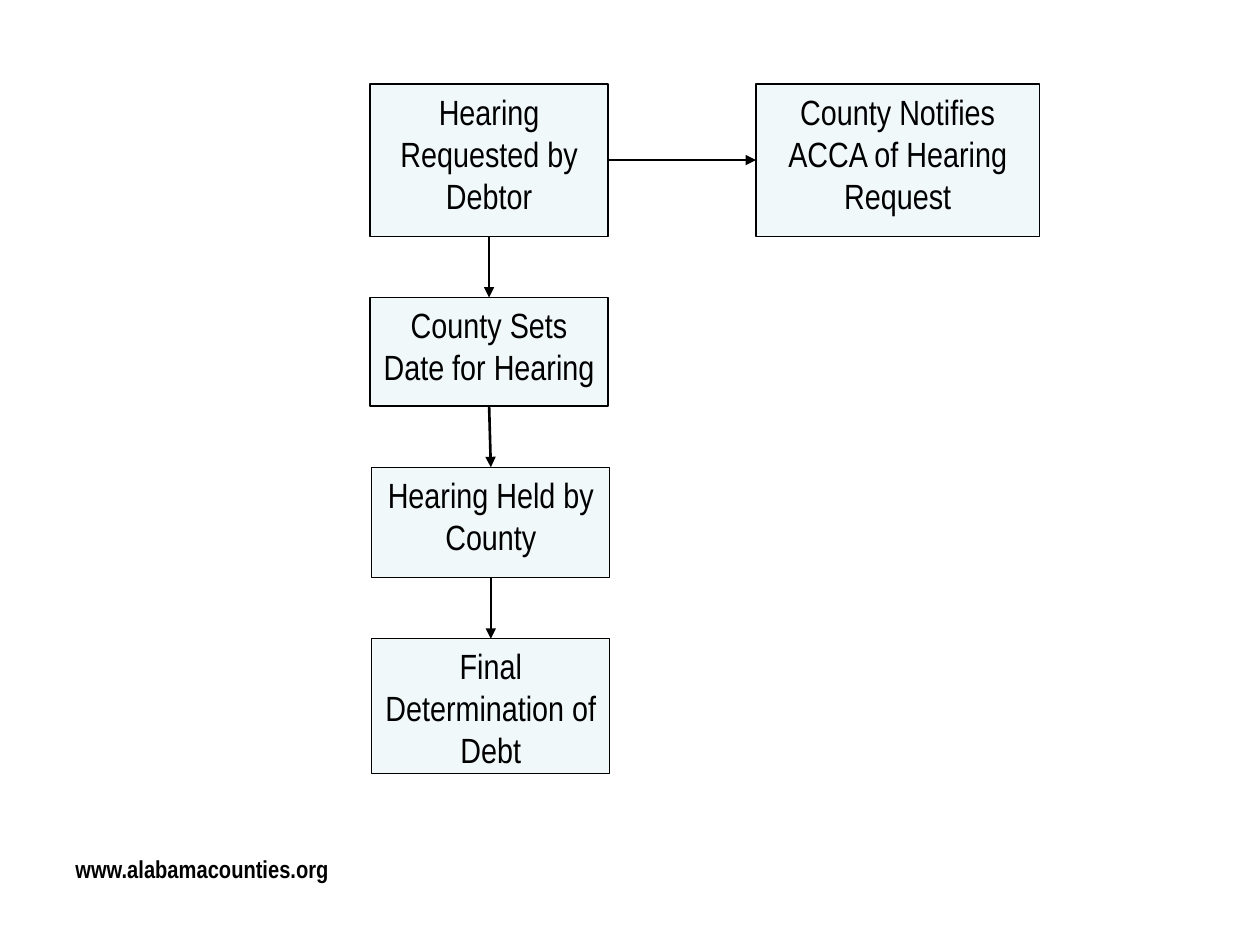
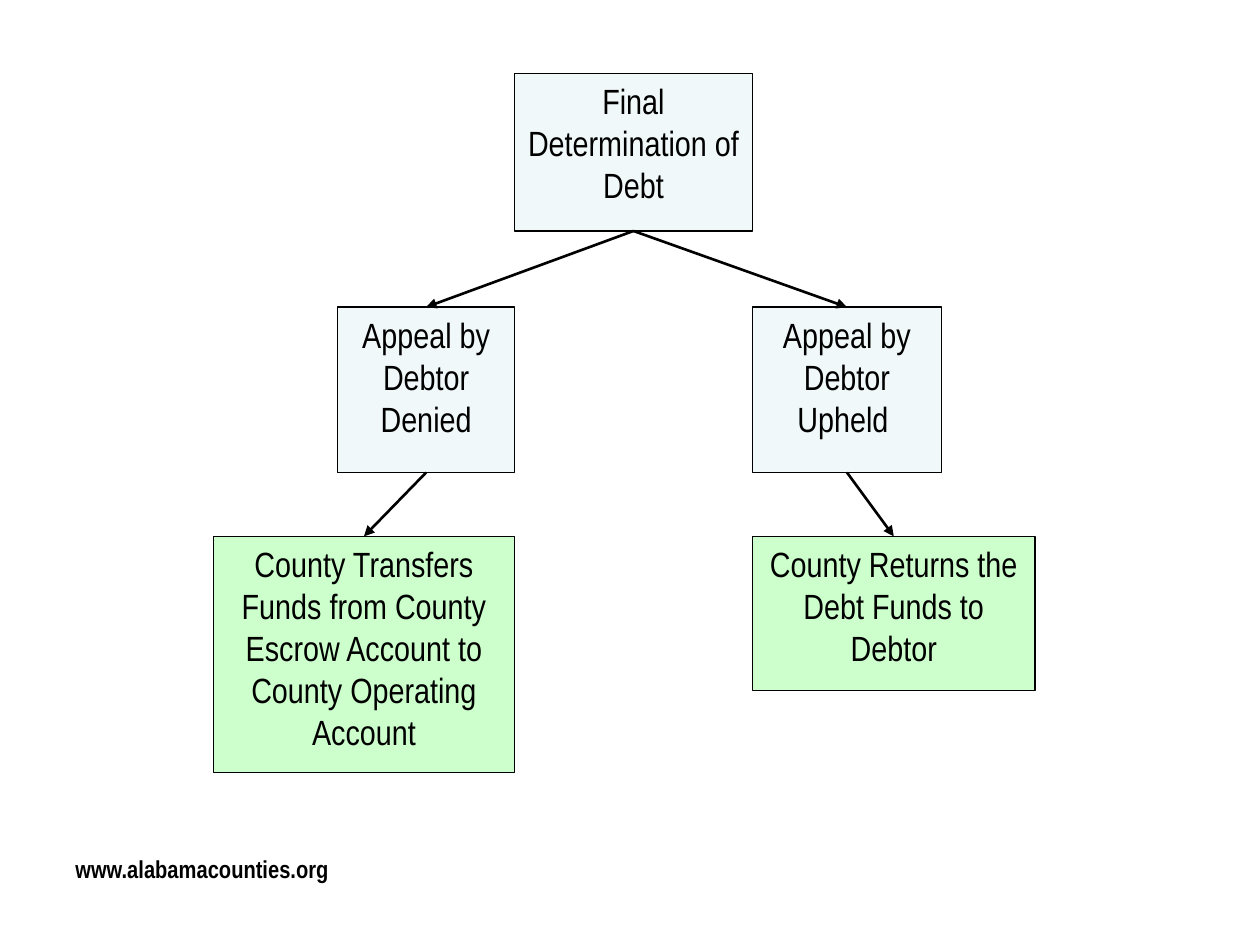
from lxml.etree import SubElement
from pptx import Presentation
from pptx.dml.color import RGBColor
from pptx.enum.shapes import MSO_CONNECTOR, MSO_SHAPE
from pptx.enum.text import MSO_ANCHOR, PP_ALIGN
from pptx.oxml.ns import qn
from pptx.util import Pt

BLACK = RGBColor(0x00, 0x00, 0x00)
STEP_FILL = RGBColor(0xF0, 0xF8, 0xF9)
OUTCOME_FILL = RGBColor(0xCC, 0xFF, 0xCC)
FONT = "Arial Narrow"
TOP, LEFT, BOTTOM, RIGHT = range(4)  # connection sites of a rectangle


def add_text(slide, text, left, top, width, height, fill=None, size=20,
             bold=False, align=PP_ALIGN.CENTER):
    """Add text, in an outlined rectangle when a fill is given."""
    area = Pt(left), Pt(top), Pt(width), Pt(height)
    if fill is None:
        box = slide.shapes.add_textbox(*area)
    else:
        box = slide.shapes.add_shape(MSO_SHAPE.RECTANGLE, *area)
        box.shadow.inherit = False
        box.fill.solid()
        box.fill.fore_color.rgb = fill
        box.line.color.rgb = BLACK
        box.line.width = Pt(0.75)
    frame = box.text_frame
    frame.word_wrap = True
    frame.vertical_anchor = MSO_ANCHOR.TOP
    paragraph = frame.paragraphs[0]
    paragraph.text = text
    paragraph.alignment = align
    font = paragraph.font
    font.name, font.size, font.bold = FONT, Pt(size), bold
    font.color.rgb = BLACK
    return box


def add_arrow(slide, start, end, start_site=BOTTOM, end_site=TOP):
    """Join two boxes with an arrow glued to their connection sites."""
    arrow = slide.shapes.add_connector(MSO_CONNECTOR.STRAIGHT, 0, 0, 0, 0)
    arrow.begin_connect(start, start_site)
    arrow.end_connect(end, end_site)
    arrow.line.color.rgb = BLACK
    arrow.line.width = Pt(1.5)
    SubElement(arrow.line._get_or_add_ln(), qn("a:tailEnd"), type="triangle")
    SubElement(arrow._element.spPr, qn("a:effectLst"))


prs = Presentation()
prs.slide_width, prs.slide_height = Pt(720), Pt(540)

# Both slides carry the same footer
hearing, appeal = [prs.slides.add_slide(prs.slide_layouts[6]) for _ in range(2)]
for slide in (hearing, appeal):
    add_text(slide, "www.alabamacounties.org", 36, 484.5, 228, 37.5,
             size=14, bold=True, align=PP_ALIGN.LEFT)

# Slide 1: hearing steps run down one column with equal gaps
STEP_WIDTH, STEP_GAP = 136, 35
hearing_steps = [
    ("Hearing Requested by Debtor", 211.5, 87),
    ("County Sets Date for Hearing", 211.5, 62),
    ("Hearing Held by County", 212.5, 63),
    ("Final Determination of Debt", 212.5, 77),
]
steps = []
step_top = 48
for text, left, height in hearing_steps:
    steps.append(add_text(hearing, text, left, step_top, STEP_WIDTH, height,
                          STEP_FILL))
    step_top += height + STEP_GAP
notice = add_text(hearing, "County Notifies ACCA of Hearing Request",
                  432, 48, 162, 87, STEP_FILL)
add_arrow(hearing, steps[0], notice, RIGHT, LEFT)
for step, next_step in zip(steps, steps[1:]):
    add_arrow(hearing, step, next_step)

# Slide 2: the determination leads to two branches beside its edges
FINAL_LEFT = 294
FINAL_RIGHT = FINAL_LEFT + STEP_WIDTH
final = add_text(appeal, "Final Determination of Debt", FINAL_LEFT, 42,
                 STEP_WIDTH, 90, STEP_FILL)
branches = [
    ("Appeal by Debtor Denied", FINAL_LEFT - 101, 101,
     "County Transfers Funds from County Escrow Account to County Operating Account",
     FINAL_LEFT - 172, 172, 135),
    ("Appeal by Debtor Upheld ", FINAL_RIGHT, 108,
     "County Returns the Debt Funds to Debtor", FINAL_RIGHT, 161.5, 88),
]
for (ruling_text, ruling_left, ruling_width,
     outcome_text, outcome_left, outcome_width, outcome_height) in branches:
    ruling = add_text(appeal, ruling_text, ruling_left, 175.5, ruling_width,
                      94.5, STEP_FILL)
    outcome = add_text(appeal, outcome_text, outcome_left, 306.5,
                       outcome_width, outcome_height, OUTCOME_FILL)
    add_arrow(appeal, final, ruling)
    add_arrow(appeal, ruling, outcome)

prs.save("out.pptx")
